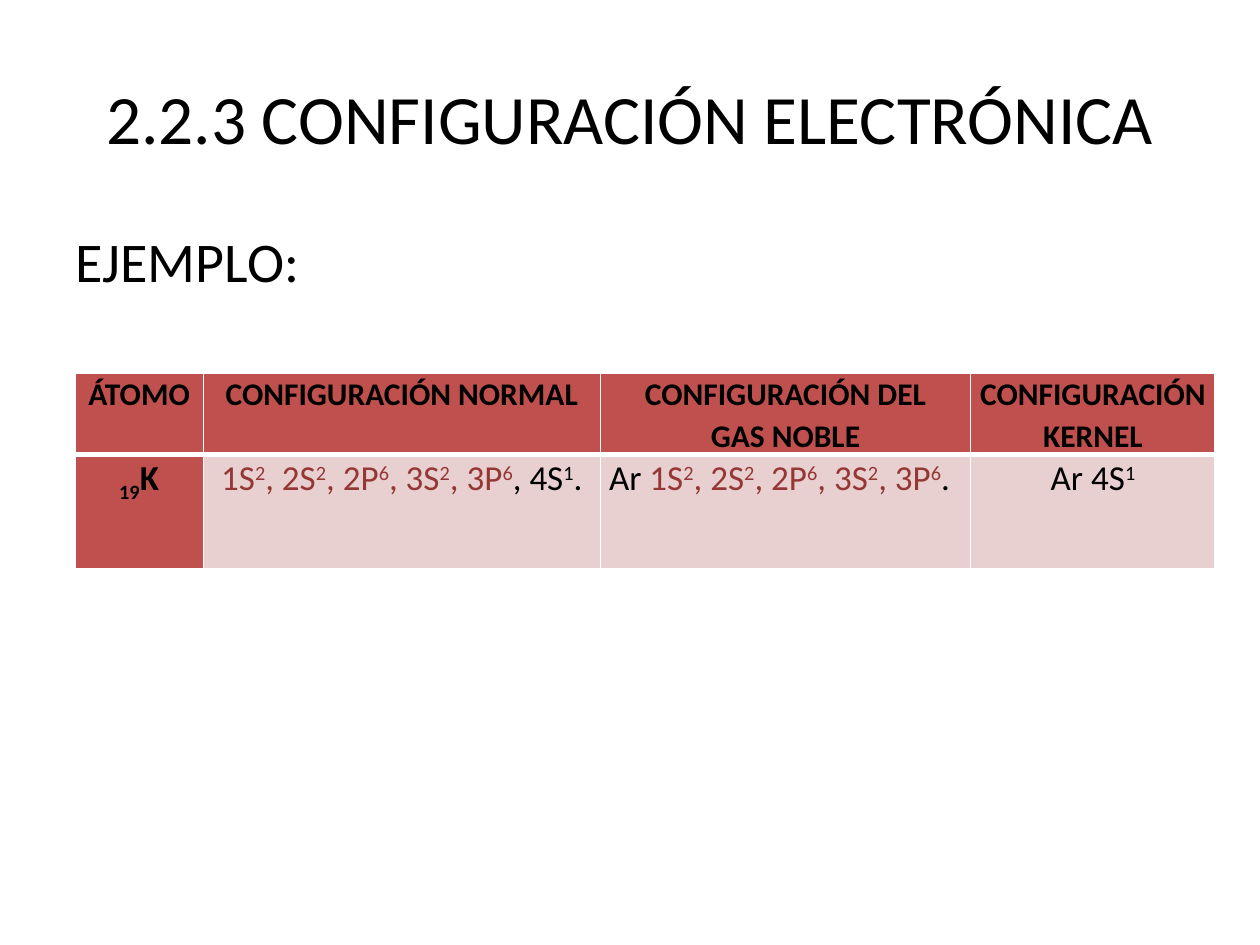
"""Build the electron configuration slide with its example table."""
from dataclasses import dataclass

from lxml import etree
from pptx import Presentation
from pptx import util as u
from pptx.dml import color
from pptx.enum import text
from pptx.oxml import ns

BLACK, WHITE = "000000", "FFFFFF"
RED, PINK, WINE = "C0504D", "E8D0D0", "953735"
MID, LEFT = text.PP_ALIGN.CENTER, text.PP_ALIGN.LEFT
TOP, CORE = text.MSO_ANCHOR.TOP, text.MSO_ANCHOR.MIDDLE


@dataclass
class Run:
    words: str
    base: int = 0
    hue: str = BLACK


@dataclass
class Cell:
    lines: list[list[Run]]
    fill: str
    size: float
    bold: bool = False
    align: int = MID


def rgb(code: str) -> color.RGBColor:
    return color.RGBColor.from_string(code)


def put(par, words: str, *, size: float, hue: str = BLACK,
        bold: bool = False, base: int = 0) -> None:
    run = par.add_run()
    run.text = words
    font = run.font
    font.name, font.size, font.bold = "Calibri", u.Pt(size), bold
    font.color.rgb = rgb(hue)
    if base:
        font._element.set("baseline", str(base * 1000))


def label(slide, words: str, box: tuple, *, size: float,
          align: int = LEFT, anchor: int = TOP) -> None:
    frame = slide.shapes.add_textbox(*map(u.Pt, box)).text_frame
    frame.word_wrap = True
    frame.vertical_anchor = anchor
    par = frame.paragraphs[0]
    par.alignment = align
    put(par, words, size=size)


def edge(cell, side: str, width: float, spot: int) -> None:
    line = etree.Element(ns.qn(f"a:ln{side}"), w=str(u.Pt(width)))
    fill = etree.SubElement(line, ns.qn("a:solidFill"))
    etree.SubElement(fill, ns.qn("a:srgbClr"), val=WHITE)
    cell._tc.get_or_add_tcPr().insert(spot, line)


def draw(cell, data: Cell, widths: dict[str, float]) -> None:
    cell.fill.solid()
    cell.fill.fore_color.rgb = rgb(data.fill)
    cell.margin_left = cell.margin_right = u.Pt(5)
    cell.margin_top = cell.margin_bottom = u.Pt(0)
    for spot, (side, width) in enumerate(widths.items()):
        edge(cell, side, width, spot)
    frame = cell.text_frame
    for i, line in enumerate(data.lines):
        par = frame.add_paragraph() if i else frame.paragraphs[0]
        par.alignment, par.line_spacing = data.align, 1.07
        for run in line:
            put(par, run.words, size=data.size, hue=run.hue,
                bold=data.bold, base=run.base)


def head(*lines: str) -> Cell:
    return Cell([[Run(line)] for line in lines], RED, 18, True)


def shells(*pairs: str) -> list[Run]:
    runs = []
    for i, pair in enumerate(pairs):
        lead = ", " if i else ""
        runs += [Run(lead + pair[:2], hue=WINE), Run(pair[2:], 30, WINE)]
    return runs


def main() -> None:
    deck = Presentation()
    deck.slide_width, deck.slide_height = u.Pt(720), u.Pt(540)
    slide = deck.slides.add_slide(deck.slide_layouts[6])
    label(slide, "2.2.3 CONFIGURACIÓN ELECTRÓNICA", (36, 21.6, 648, 90),
          size=39.6, align=MID, anchor=CORE)
    label(slide, "EJEMPLO:", (36, 126, 648, 356.4), size=32)

    noble = shells("1S2", "2S2", "2P6", "3S2", "3P6")
    last = [Run("1", 30)]
    rows = [
        [head("ÁTOMO"), head("CONFIGURACIÓN NORMAL"),
         head("CONFIGURACIÓN DEL", "GAS NOBLE"),
         head("CONFIGURACIÓN KERNEL")],
        [Cell([[Run("19", -25), Run("K")]], RED, 20, True),
         Cell([noble + [Run(", 4S")] + last + [Run(".")]], PINK, 20),
         Cell([[Run("Ar ")] + noble + [Run(".")]], PINK, 20, align=LEFT),
         Cell([[Run("Ar 4S")] + last], PINK, 20)],
    ]
    wide, high = (73.5, 226.8, 211.7, 139.7), (33.84, 65.5)
    table = slide.shapes.add_table(
        len(high), len(wide), u.Pt(42.75), u.Pt(213.3),
        u.Pt(sum(wide)), u.Pt(sum(high))).table
    for col, width in zip(table.columns, wide):
        col.width = u.Pt(width)
    for r, (row, height) in enumerate(zip(rows, high)):
        table.rows[r].height = u.Pt(height)
        widths = {"L": 1, "R": 1, "T": 3 if r else 1, "B": 1 if r else 3}
        for c, data in enumerate(row):
            draw(table.cell(r, c), data, widths)
    deck.save("out.pptx")


if __name__ == "__main__":
    main()
